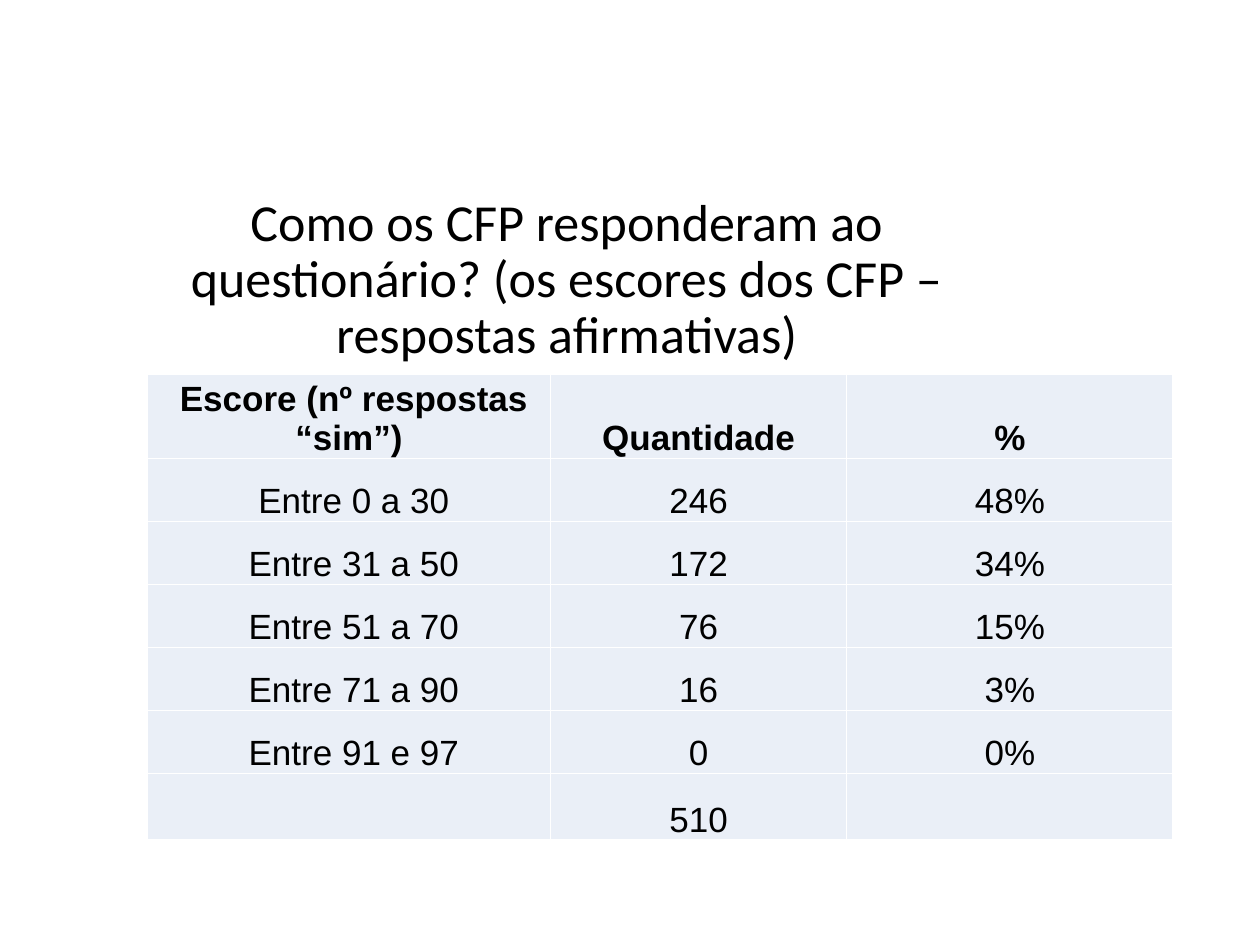
"""Builds the slide on how the CFP answered the questionnaire."""
import dataclasses

import lxml.etree
import pptx
import pptx.dml.color
import pptx.enum.text
import pptx.oxml.ns
import pptx.util

Inches = pptx.util.Inches
Pt = pptx.util.Pt


@dataclasses.dataclass(frozen=True)
class Theme:
    text: str = "000000"
    cell: str = "EAEFF7"
    border: str = "FFFFFF"
    title_font: str = "Calibri"
    body_font: str = "Arial"
    title_size: float = 29.7
    body_size: float = 20
    border_width: float = 1


class SlideBuilder:
    def __init__(self, slide, theme):
        self.slide = slide
        self.theme = theme

    def style(self, p, font, size, bold=False):
        p.alignment = pptx.enum.text.PP_ALIGN.CENTER
        p.font.name = font
        p.font.size = Pt(size)
        p.font.bold = bold
        p.font.color.rgb = pptx.dml.color.RGBColor.from_string(self.theme.text)

    def title(self, text, left, top, width, height):
        sp = self.slide.shapes.add_textbox(
            Inches(left), Inches(top), Inches(width), Inches(height))
        tf = sp.text_frame
        tf.word_wrap = True
        tf.vertical_anchor = pptx.enum.text.MSO_ANCHOR.MIDDLE
        p = tf.paragraphs[0]
        p.text = text
        p.line_spacing = 0.9
        self.style(p, self.theme.title_font, self.theme.title_size)

    def borders(self, cell):
        qn = pptx.oxml.ns.qn
        tc_pr = cell._tc.get_or_add_tcPr()
        for side in ("lnL", "lnR", "lnT", "lnB"):
            ln = lxml.etree.SubElement(
                tc_pr, qn(f"a:{side}"), w=str(Pt(self.theme.border_width)))
            fill = lxml.etree.SubElement(ln, qn("a:solidFill"))
            lxml.etree.SubElement(fill, qn("a:srgbClr"), val=self.theme.border)

    def cell(self, cell, text, bold):
        cell.margin_left = cell.margin_right = 0
        cell.margin_top = cell.margin_bottom = 0
        cell.vertical_anchor = pptx.enum.text.MSO_ANCHOR.BOTTOM
        self.borders(cell)
        cell.fill.solid()
        cell.fill.fore_color.rgb = pptx.dml.color.RGBColor.from_string(self.theme.cell)
        p = cell.text_frame.paragraphs[0]
        p.text = text
        self.style(p, self.theme.body_font, self.theme.body_size, bold)

    def table(self, rows, left, top, widths, heights):
        table = self.slide.shapes.add_table(
            len(rows), len(widths), Inches(left), Inches(top),
            Inches(sum(widths)), Inches(sum(heights))).table
        for column, width in zip(table.columns, widths):
            column.width = Inches(width)
        for i, (row, height) in enumerate(zip(rows, heights)):
            table.rows[i].height = Inches(height)
            for j, text in enumerate(row):
                self.cell(table.cell(i, j), text, bold=i == 0)


def main():
    prs = pptx.Presentation()
    prs.slide_width, prs.slide_height = Inches(10), Inches(7.5)
    s = SlideBuilder(prs.slides.add_slide(prs.slide_layouts[6]), Theme())
    s.title("Como os CFP responderam ao questionário? "
            "(os escores dos CFP – respostas afirmativas)", 1.17, 1.47, 6.66, 1.51)
    rows = [
        (" Escore (nº respostas “sim”)", "Quantidade", "%"),
        (" Entre 0 a 30", "246", "48%"),
        (" Entre 31 a 50", "172", "34%"),
        (" Entre 51 a 70", "76", "15%"),
        (" Entre 71 a 90", "16", "3%"),
        (" Entre 91 e 97", "0", "0%"),
        ("", "510", ""),
    ]
    s.table(rows, 1.17, 2.97, (3.2, 2.35, 2.59), [0.5] * 6 + [0.53])
    prs.save("out.pptx")


if __name__ == "__main__":
    main()
